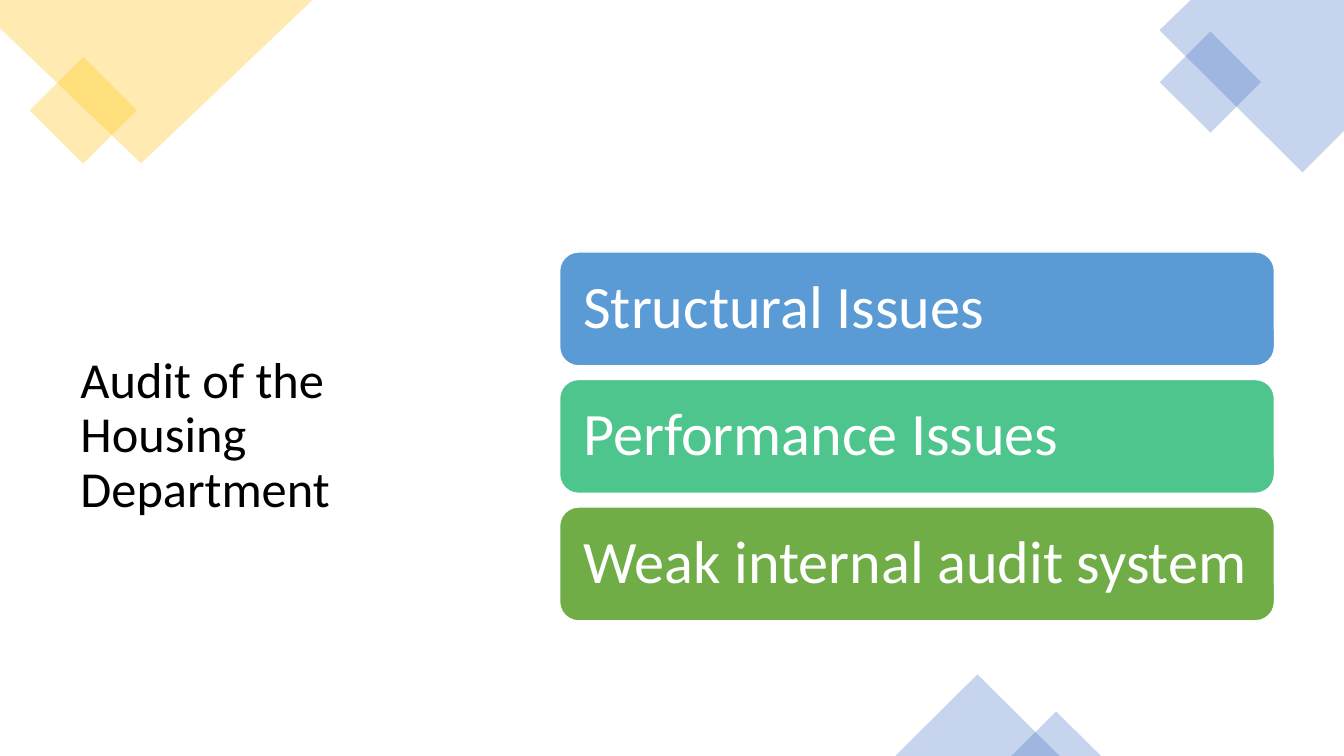
from lxml import etree
from pptx import Presentation
from pptx.dml.color import RGBColor
from pptx.enum import shapes, text
from pptx.oxml import ns
from pptx.util import Inches, Pt

GOLD = RGBColor(0xFF, 0xC0, 0x00)
BLUE = RGBColor(0x44, 0x72, 0xC4)
SKY = RGBColor(0x5B, 0x9B, 0xD5)
MINT = RGBColor(0x4D, 0xC5, 0x8D)
GREEN = RGBColor(0x70, 0xAD, 0x47)
WHITE = RGBColor(0xFF, 0xFF, 0xFF)
BLACK = RGBColor(0x00, 0x00, 0x00)

KIND = shapes.MSO_SHAPE
ISSUES = [
    ("Structural Issues", SKY),
    ("Performance Issues", MINT),
    ("Weak internal audit system", GREEN),
]


def tint(shape, color):
    """Fill with 30 % opacity, without line or shadow."""
    shape.shadow.inherit = False
    shape.line.fill.background()
    shape.fill.solid()
    shape.fill.fore_color.rgb = color
    clr = shape.fill._xPr.find(".//" + ns.qn("a:srgbClr"))
    etree.SubElement(clr, ns.qn("a:alpha"), val="30000")


def add_accent(slide, kind, box, color, turn=0):
    shape = slide.shapes.add_shape(kind, *map(Inches, box))
    shape.rotation = turn
    tint(shape, color)


def add_corner(slide, points, color):
    first, *rest = [(Inches(x), Inches(y)) for x, y in points]
    form = slide.shapes.build_freeform(*first)
    form.add_line_segments(rest, close=True)
    tint(form.convert_to_shape(), color)


def set_text(shape, words, size, color):
    frame = shape.text_frame
    frame.text = words
    frame.word_wrap = True
    frame.vertical_anchor = text.MSO_ANCHOR.MIDDLE
    para = frame.paragraphs[0]
    para.alignment = text.PP_ALIGN.LEFT
    para.line_spacing = 0.9
    font = para.runs[0].font
    font.name = "Calibri"
    font.size = Pt(size)
    font.color.rgb = color


def add_title(slide, words):
    box = slide.shapes.add_textbox(
        Inches(0.7), Inches(1.86), Inches(4.33), Inches(4.94))
    set_text(box, words, 36, BLACK)


def add_bar(slide, top, words, color):
    bar = slide.shapes.add_shape(
        KIND.ROUNDED_RECTANGLE,
        Inches(5.55), Inches(top), Inches(7.09), Inches(1.13))
    bar.shadow.inherit = False
    bar.fill.solid()
    bar.fill.fore_color.rgb = color
    bar.line.color.rgb = WHITE
    bar.line.width = Pt(1)
    set_text(bar, words, 43, WHITE)
    frame = bar.text_frame
    frame.margin_left = frame.margin_right = Inches(0.18)
    frame.margin_top = frame.margin_bottom = Inches(0.18)


def main():
    prs = Presentation()
    prs.slide_width, prs.slide_height = Inches(13.33), Inches(7.5)
    slide = prs.slides.add_slide(prs.slide_layouts[6])

    add_title(slide, "Audit of the Housing Department")

    add_accent(slide, KIND.RECTANGLE, (0.45, 0.72, 0.75, 0.75), GOLD, 45)
    add_corner(slide, [(0, 0), (3.1, 0), (1.4, 1.62), (0, 0.28)], GOLD)
    add_corner(slide, [(11.81, 0), (13.33, 0), (13.33, 1.3),
                       (12.92, 1.71), (11.5, 0.3)], BLUE)
    add_accent(slide, KIND.RECTANGLE, (11.65, 0.46, 0.71, 0.71), BLUE, 45)
    for box in [(8.88, 6.69, 1.63, 0.81), (10.03, 7.06, 0.89, 0.44)]:
        add_accent(slide, KIND.ISOSCELES_TRIANGLE, box, BLUE)

    for row, (words, color) in enumerate(ISSUES):
        add_bar(slide, 2.5 + row * 1.265, words, color)

    prs.save("out.pptx")


if __name__ == "__main__":
    main()
